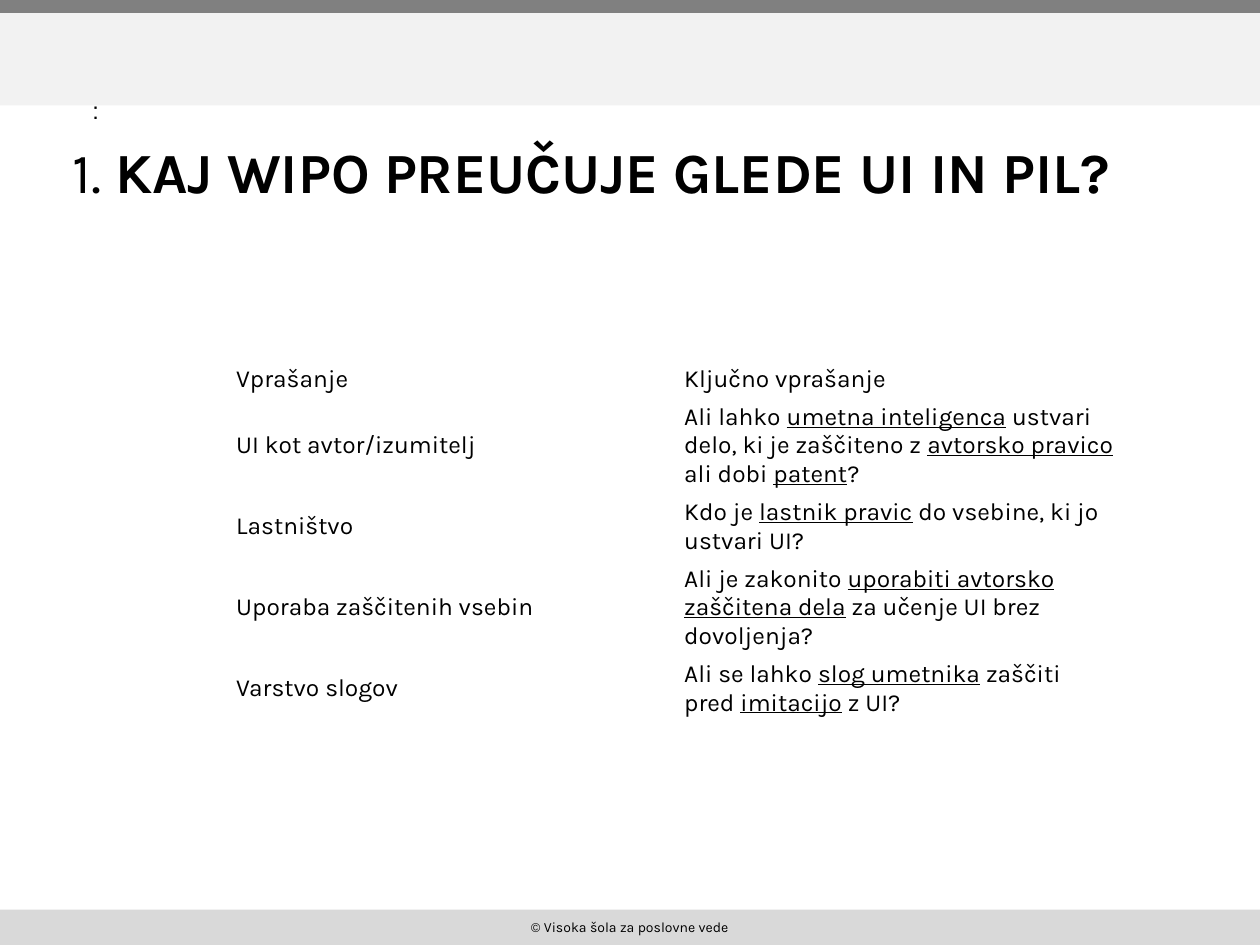
from dataclasses import dataclass

import pptx
import pptx.dml.color
import pptx.enum.shapes
import pptx.enum.text
import pptx.util

Pt = pptx.util.Pt
RGBColor = pptx.dml.color.RGBColor
MIDDLE = pptx.enum.text.MSO_ANCHOR.MIDDLE

BLACK = RGBColor(0x00, 0x00, 0x00)
DARK_GREY = RGBColor(0x80, 0x80, 0x80)
MID_GREY = RGBColor(0xD9, 0xD9, 0xD9)
PALE_GREY = RGBColor(0xF2, 0xF2, 0xF2)

SLIDE_WIDTH = 720
SLIDE_HEIGHT = 540
FOOTER_HEIGHT = 20.2
BODY_FONT = "Karla"


@dataclass(frozen=True)
class Span:
    text: str
    bold: bool = False
    underline: bool = False


@dataclass(frozen=True)
class Band:
    top: float
    height: float
    color: RGBColor


@dataclass(frozen=True)
class Question:
    height: float
    topic: str
    spans: tuple[Span, ...]


def key(text: str) -> Span:
    return Span(text, underline=True)


HEADER_BAND = Band(0, 60.3, PALE_GREY)
TOP_STRIPE = Band(0, 7.4, DARK_GREY)
FOOTER_BAND = Band(SLIDE_HEIGHT - FOOTER_HEIGHT, FOOTER_HEIGHT, MID_GREY)

QUESTIONS = [
    Question(21.6, "Vprašanje", (Span("Ključno vprašanje"),)),
    Question(54, "UI kot avtor/izumitelj", (
        Span("Ali lahko "), key("umetna inteligenca"),
        Span(" ustvari delo, ki je zaščiteno z "), key("avtorsko pravico"),
        Span(" ali dobi "), key("patent"), Span("?"),
    )),
    Question(38, "Lastništvo", (
        Span("Kdo je "), key("lastnik pravic"),
        Span(" do vsebine, ki jo ustvari UI?"),
    )),
    Question(54, "Uporaba zaščitenih vsebin", (
        Span("Ali je zakonito "), key("uporabiti avtorsko zaščitena dela"),
        Span(" za učenje UI brez dovoljenja?"),
    )),
    Question(38, "Varstvo slogov", (
        Span("Ali se lahko "), key("slog umetnika"), Span(" zaščiti pred "),
        key("imitacijo"), Span(" z UI?"),
    )),
]


def write_spans(para, spans: tuple[Span, ...], size: float,
                font: str = BODY_FONT) -> None:
    for span in spans:
        run = para.add_run()
        run.text = span.text
        run.font.name = font
        run.font.size = Pt(size)
        run.font.bold = span.bold
        run.font.underline = span.underline
        run.font.color.rgb = BLACK


def set_margins(target) -> None:
    target.margin_left = target.margin_right = Pt(5.4)
    target.margin_top = target.margin_bottom = Pt(2.7)
    target.vertical_anchor = MIDDLE


def add_band(page, band: Band):
    shape = page.shapes.add_shape(
        pptx.enum.shapes.MSO_SHAPE.RECTANGLE,
        Pt(0), Pt(band.top), Pt(SLIDE_WIDTH), Pt(band.height))
    shape.shadow.inherit = False
    shape.fill.solid()
    shape.fill.fore_color.rgb = band.color
    shape.line.fill.background()
    return shape


def add_footer(page) -> None:
    frame = add_band(page, FOOTER_BAND).text_frame
    frame.vertical_anchor = MIDDLE
    para = frame.paragraphs[0]
    para.alignment = pptx.enum.text.PP_ALIGN.CENTER
    write_spans(para, (Span("© Visoka šola za poslovne vede"),), 8)


def format_title(page) -> None:
    title = page.shapes.title
    title.left, title.top = Pt(34.5), Pt(60.5)
    title.width, title.height = Pt(648), Pt(74)
    frame = title.text_frame
    frame.word_wrap = True
    frame.auto_size = pptx.enum.text.MSO_AUTO_SIZE.NONE
    frame.vertical_anchor = MIDDLE
    para = frame.paragraphs[0]
    para.alignment = pptx.enum.text.PP_ALIGN.LEFT
    spans = (Span("1. "), Span("KAJ WIPO PREUČUJE GLEDE UI IN PIL?", bold=True))
    write_spans(para, spans, 32.4)


def add_question_table(page, questions: list[Question]) -> None:
    height = sum(question.height for question in questions)
    table = page.shapes.add_table(
        len(questions), 2, Pt(129.6), Pt(205.8), Pt(512), Pt(height)).table
    table.first_row = False
    table.horz_banding = False
    for row, question in zip(table.rows, questions):
        row.height = Pt(question.height)
        contents = ((Span(question.topic),), question.spans)
        for cell, spans in zip(row.cells, contents):
            cell.fill.background()
            set_margins(cell)
            write_spans(cell.text_frame.paragraphs[0], spans, 14)


def add_colon(page) -> None:
    box = page.shapes.add_textbox(Pt(47.4), Pt(44), Pt(657.4), Pt(38))
    frame = box.text_frame
    frame.word_wrap = True
    set_margins(frame)
    write_spans(frame.paragraphs[0], (Span(":"),), 13.5, "Arial")


def main() -> None:
    deck = pptx.Presentation()
    deck.slide_width = Pt(SLIDE_WIDTH)
    deck.slide_height = Pt(SLIDE_HEIGHT)
    page = deck.slides.add_slide(deck.slide_layouts[5])
    add_footer(page)
    add_band(page, HEADER_BAND)
    add_band(page, TOP_STRIPE)
    format_title(page)
    add_question_table(page, QUESTIONS)
    add_colon(page)
    deck.save("out.pptx")


if __name__ == "__main__":
    main()
